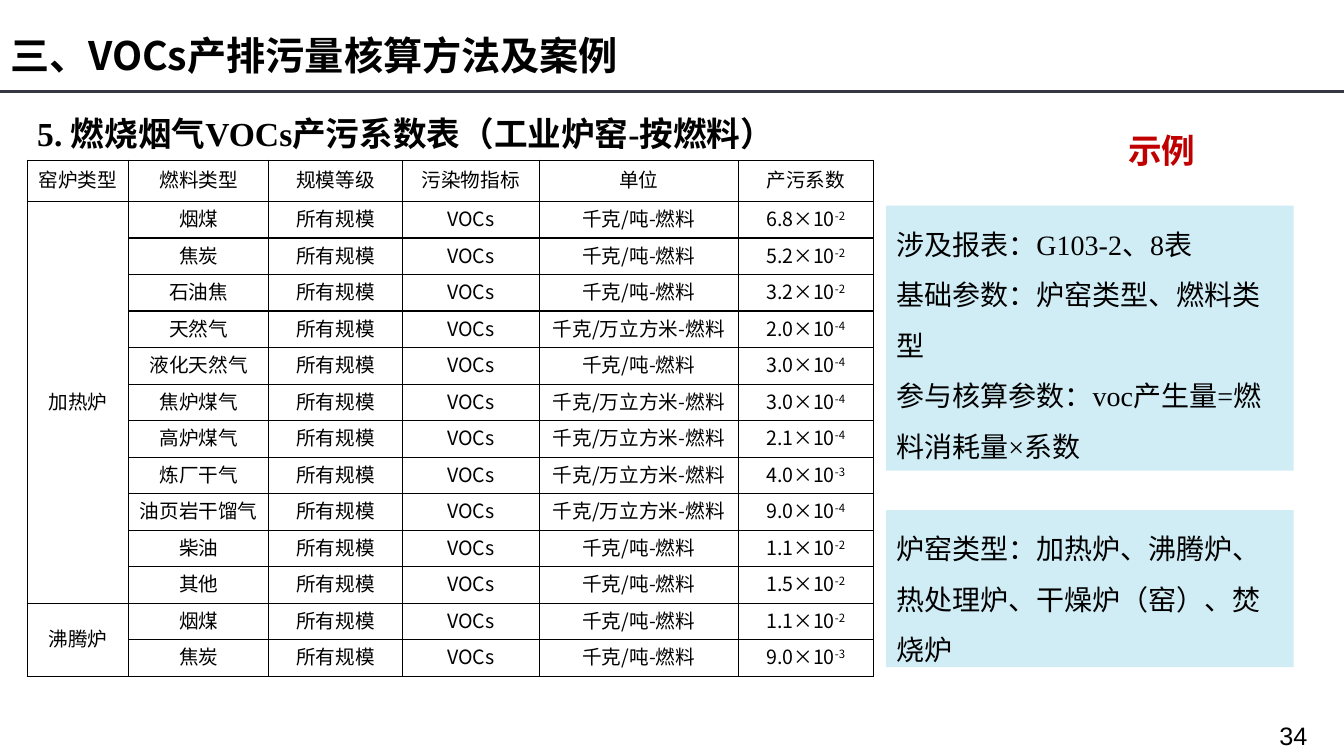
"""Build the slide on VOCs emission factors of industrial furnaces by fuel."""
from dataclasses import dataclass

from lxml.etree import SubElement
from pptx import Presentation
from pptx.dml.color import RGBColor
from pptx.enum.shapes import MSO_CONNECTOR, MSO_SHAPE
from pptx.enum.text import MSO_ANCHOR, MSO_AUTO_SIZE, PP_ALIGN
from pptx.oxml.ns import qn
from pptx.slide import Slide
from pptx.table import _Cell
from pptx.text.text import Font, TextFrame
from pptx.util import Emu, Inches, Pt

SLIDE_WIDTH, SLIDE_HEIGHT = Inches(13.33), Inches(7.5)
COLORS = {"text": "000000", "accent": "C00000", "rule": "353842", "note": "D0EDF6"}
SERIF, SANS = "Times New Roman", "Noto Sans CJK SC"
PER_TON, PER_VOLUME = "千克/吨-燃料", "千克/万立方米-燃料"
HEADERS = ["窑炉类型", "燃料类型", "规模等级", "污染物指标", "单位", "产污系数"]
COLUMN_WEIGHTS = [1.01, 1.39, 1.33, 1.36, 1.98, 1.34]
HEADER_SHARE = 0.08


@dataclass(frozen=True)
class Box:
    """Position and size as percentages of the slide."""

    left: float
    top: float
    width: float
    height: float

    def lengths(self) -> tuple[Emu, Emu, Emu, Emu]:
        return (across(self.left), down(self.top), across(self.width), down(self.height))


@dataclass(frozen=True)
class Label:
    box: Box
    text: str
    size: int
    font: str = SERIF
    color: str = "text"
    bold: bool = False
    wrap: bool = True


@dataclass(frozen=True)
class Note:
    box: Box
    lines: tuple[str, ...]


@dataclass(frozen=True)
class Factor:
    fuel: str
    unit: str
    base: str
    exponent: str


TITLE_BOX = Box(0, 3.47, 68.94, 13.87)
TABLE_BOX = Box(2.03, 21.2, 62.94, 68.27)
RULE_TOP = 12.13
LABELS = [
    Label(Box(94.45, 94.67, 5.6, 5.33), "34", 18, font="Arial"),
    Label(Box(2.03, 14.27, 66.84, 12.13), "5. 燃烧烟气VOCs产污系数表（工业炉窑-按燃料）", 24, bold=True),
    Label(Box(83.2, 16.53, 6.6, 6.67), "示例", 24, color="accent", bold=True, wrap=False),
]
NOTES = [
    Note(Box(65.94, 27.2, 30.31, 35.07), (
        "涉及报表：G103-2、8表",
        "基础参数：炉窑类型、燃料类型",
        "参与核算参数：voc产生量=燃料消耗量×系数",
    )),
    Note(Box(65.94, 67.47, 30.31, 20.8), (
        "炉窑类型：加热炉、沸腾炉、热处理炉、干燥炉（窑）、焚烧炉",
    )),
]
FURNACES = {
    "加热炉": [
        Factor("烟煤", PER_TON, "6.8", "-2"),
        Factor("焦炭", PER_TON, "5.2", "-2"),
        Factor("石油焦", PER_TON, "3.2", "-2"),
        Factor("天然气", PER_VOLUME, "2.0", "-4"),
        Factor("液化天然气", PER_TON, "3.0", "-4"),
        Factor("焦炉煤气", PER_VOLUME, "3.0", "-4"),
        Factor("高炉煤气", PER_VOLUME, "2.1", "-4"),
        Factor("炼厂干气", PER_VOLUME, "4.0", "-3"),
        Factor("油页岩干馏气", PER_VOLUME, "9.0", "-4"),
        Factor("柴油", PER_TON, "1.1", "-2"),
        Factor("其他", PER_TON, "1.5", "-2"),
    ],
    "沸腾炉": [
        Factor("烟煤", PER_TON, "1.1", "-2"),
        Factor("焦炭", PER_TON, "9.0", "-3"),
    ],
}


def across(percent: float) -> Emu:
    return Emu(round(SLIDE_WIDTH * percent / 100))


def down(percent: float) -> Emu:
    return Emu(round(SLIDE_HEIGHT * percent / 100))


def style_font(font: Font, name: str, size: int, color: str = "text", bold: bool = False) -> None:
    font.name, font.size, font.bold = name, Pt(size), bold
    font.color.rgb = RGBColor.from_string(COLORS[color])


def prepare_frame(frame: TextFrame, wrap: bool = True) -> None:
    frame.word_wrap = wrap
    frame.auto_size = MSO_AUTO_SIZE.NONE
    frame.vertical_anchor = MSO_ANCHOR.TOP


def add_title(slide: Slide) -> None:
    title = slide.shapes.title
    title.left, title.top, title.width, title.height = TITLE_BOX.lengths()
    prepare_frame(title.text_frame)
    paragraph = title.text_frame.paragraphs[0]
    paragraph.alignment = PP_ALIGN.LEFT
    for text, font in (("三、", SERIF), ("VOCs产排污量核算方法及案例", SANS)):
        run = paragraph.add_run()
        run.text = text
        style_font(run.font, font, 28, bold=True)


def add_rule(slide: Slide) -> None:
    rule = slide.shapes.add_connector(
        MSO_CONNECTOR.STRAIGHT, SLIDE_WIDTH, down(RULE_TOP), 0, down(RULE_TOP))
    rule.line.color.rgb = RGBColor.from_string(COLORS["rule"])
    rule.line.width = Pt(2.5)
    SubElement(rule.element.spPr, qn("a:effectLst"))


def add_label(slide: Slide, label: Label) -> None:
    frame = slide.shapes.add_textbox(*label.box.lengths()).text_frame
    prepare_frame(frame, label.wrap)
    frame.text = label.text
    style_font(frame.paragraphs[0].font, label.font, label.size, label.color, label.bold)


def add_note(slide: Slide, note: Note) -> None:
    shape = slide.shapes.add_shape(MSO_SHAPE.RECTANGLE, *note.box.lengths())
    shape.shadow.inherit = False
    shape.fill.solid()
    shape.fill.fore_color.rgb = RGBColor.from_string(COLORS["note"])
    shape.line.fill.background()
    prepare_frame(shape.text_frame)
    shape.text_frame.text = "\n".join(note.lines)
    for paragraph in shape.text_frame.paragraphs:
        paragraph.alignment = PP_ALIGN.LEFT
        paragraph.line_spacing = 1.5
        style_font(paragraph.font, SERIF, 20)


def format_cell(cell: _Cell) -> None:
    cell.margin_left = cell.margin_right = Inches(0.02)
    cell.margin_top = cell.margin_bottom = 0
    cell.vertical_anchor = MSO_ANCHOR.MIDDLE
    properties = cell._tc.get_or_add_tcPr()
    for side in ("a:lnL", "a:lnR", "a:lnT", "a:lnB"):
        border = SubElement(properties, qn(side), w=str(Pt(1)))
        SubElement(SubElement(border, qn("a:solidFill")), qn("a:srgbClr"), val=COLORS["text"])
    cell.fill.background()
    paragraph = cell.text_frame.paragraphs[0]
    paragraph.alignment = PP_ALIGN.CENTER
    paragraph.line_spacing = 0.8
    style_font(paragraph.font, SANS, 14)


def add_factor_table(slide: Slide) -> None:
    factor_count = sum(len(factors) for factors in FURNACES.values())
    left, top, width, height = TABLE_BOX.lengths()
    table = slide.shapes.add_table(
        factor_count + 1, len(HEADERS), left, top, width, height).table
    for column, weight in zip(table.columns, COLUMN_WEIGHTS):
        column.width = Emu(round(width * weight / sum(COLUMN_WEIGHTS)))
    for index, row in enumerate(table.rows):
        share = (1 - HEADER_SHARE) / factor_count if index else HEADER_SHARE
        row.height = Emu(round(height * share))
    for column, header in enumerate(HEADERS):
        table.cell(0, column).text = header
    row = 1
    for furnace, factors in FURNACES.items():
        table.cell(row, 0).text = furnace
        table.cell(row, 0).merge(table.cell(row + len(factors) - 1, 0))
        for row, factor in enumerate(factors, row):
            values = (factor.fuel, "所有规模", "VOCs", factor.unit, f"{factor.base}×10")
            for column, value in enumerate(values, 1):
                table.cell(row, column).text = value
            exponent = table.cell(row, len(values)).text_frame.paragraphs[0].add_run()
            exponent.text = factor.exponent
            exponent._r.get_or_add_rPr().set("baseline", "30000")
        row += 1
    for cell in table.iter_cells():
        format_cell(cell)


def main() -> None:
    presentation = Presentation()
    presentation.slide_width, presentation.slide_height = SLIDE_WIDTH, SLIDE_HEIGHT
    slide = presentation.slides.add_slide(presentation.slide_layouts.get_by_name("Title Only"))
    add_title(slide)
    add_rule(slide)
    for label in LABELS:
        add_label(slide, label)
    for note in NOTES:
        add_note(slide, note)
    add_factor_table(slide)
    for latin in list(slide.element.iter(qn("a:latin"))):
        SubElement(latin.getparent(), qn("a:ea"), typeface=SANS)
    presentation.save("out.pptx")


if __name__ == "__main__":
    main()
